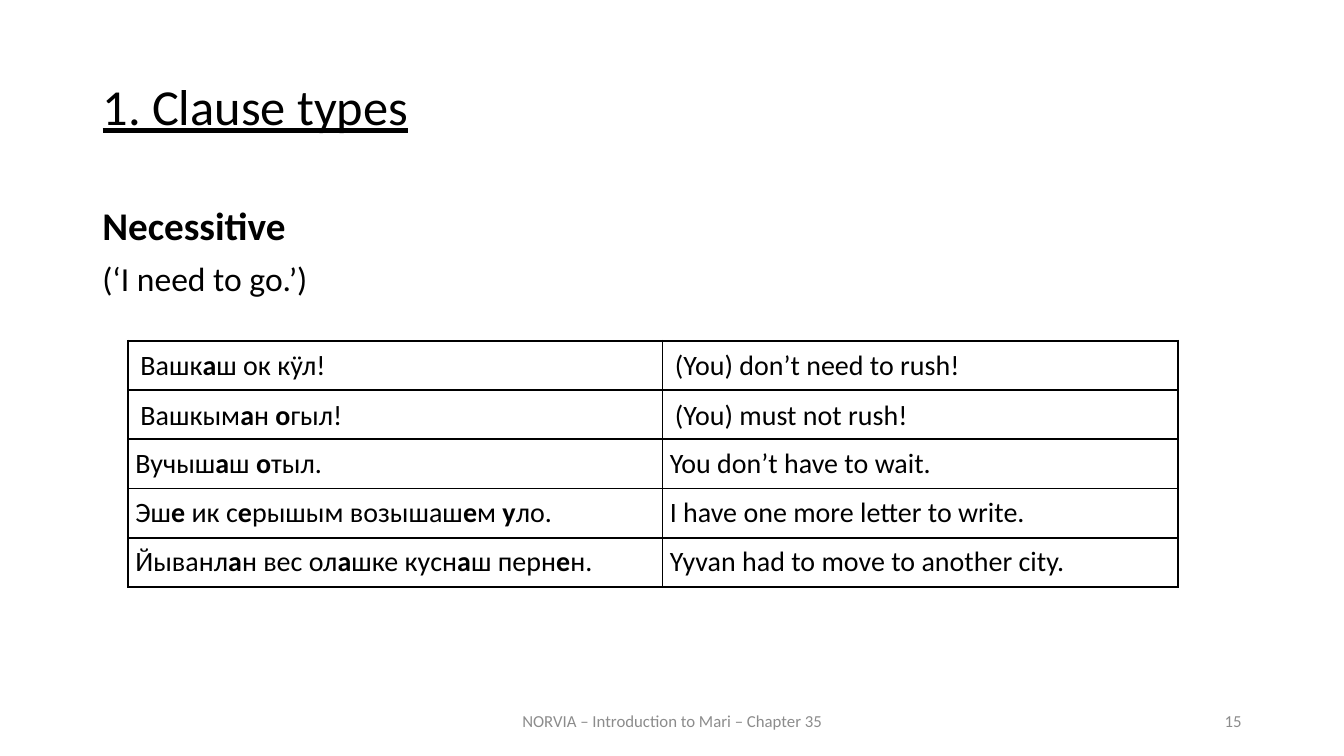
from lxml import etree
from pptx import Presentation
from pptx import util as u
from pptx.dml.color import RGBColor
from pptx.enum import text
from pptx.oxml import ns

COLORS = {"ink": "000000", "footer": "8C8C8C"}
FONT = "Calibri"
NO_STYLE = "{2D5ABB26-0587-4C30-8999-92F81FD0307C}"

# Cell margins in cm: left and right, top
WIDE, NARROW = (0.31, 0.04), (0.18, 0)

# Asterisks enclose bold letters
EXAMPLES = [
    (WIDE, "Вашк*а*ш ок кӱл!", "(You) don’t need to rush!"),
    (WIDE, "Вашкым*а*н *о*гыл!", "(You) must not rush!"),
    (NARROW, "Вучыш*а*ш *о*тыл.", "You don’t have to wait."),
    (NARROW, "Эш*е *ик с*е*рышым возышаш*е*м *у*ло.", "I have one more letter to write."),
    (NARROW, "Йыванл*а*н вес ол*а*шке кусн*а*ш перн*е*н.", "Yyvan had to move to another city."),
]


def write(p, words, size=20, color="ink", align=None, underline=None, before=None, spacing=None):
    """Write words into a paragraph; parts between asterisks are bold."""
    p.alignment, p.line_spacing = align, spacing
    if before is not None:
        p.space_before = u.Pt(before)
    for i, part in enumerate(words.split("*")):
        if part:
            r = p.add_run()
            r.text = part
            f = r.font
            f.name, f.size, f.bold, f.underline = FONT, u.Pt(size), i % 2 == 1, underline
            f.color.rgb = RGBColor.from_string(COLORS[color])


def add_box(s, box, anchor=text.MSO_ANCHOR.TOP):
    tf = s.shapes.add_textbox(*map(u.Cm, box)).text_frame
    tf.word_wrap = True
    tf.vertical_anchor = anchor
    return tf


def add_title(s, box):
    sp = s.shapes.title
    sp.left, sp.top, sp.width, sp.height = map(u.Cm, box)
    tf = sp.text_frame
    tf.vertical_anchor = text.MSO_ANCHOR.TOP
    tf.auto_size = text.MSO_AUTO_SIZE.NONE
    write(tf.paragraphs[0], "1. Clause types", size=36, align=text.PP_ALIGN.JUSTIFY,
          underline=True, before=12, spacing=0.9)


def add_heading(s, box):
    tf = add_box(s, box)
    write(tf.paragraphs[0], "*Necessitive*", size=28, before=10, spacing=0.9)
    write(tf.add_paragraph(), "(‘I need to go.’)", size=24, before=10, spacing=0.9)


def add_borders(cell, **widths):
    """Draw solid cell borders, given as side=points in L, R, T, B order."""
    tcPr = cell._tc.get_or_add_tcPr()
    for i, (side, width) in enumerate(widths.items()):
        ln = etree.Element(ns.qn("a:ln" + side), w=str(u.Pt(width)))
        fill = etree.SubElement(ln, ns.qn("a:solidFill"))
        etree.SubElement(fill, ns.qn("a:srgbClr"), val=COLORS["ink"])
        tcPr.insert(i, ln)


def add_example(s, box, first_column, margins, sentences):
    """Add a one-row table with a sentence and its translation."""
    width = box[2]
    frame = s.shapes.add_table(1, 2, *map(u.Cm, box))
    table = frame.table
    table.first_row = table.horz_banding = False
    frame._element.find(".//" + ns.qn("a:tableStyleId")).text = NO_STYLE
    table.columns[0].width = u.Cm(first_column)
    table.columns[1].width = u.Cm(width - first_column)
    side, top = map(u.Cm, margins)
    for j, sentence in enumerate(sentences):
        cell = table.cell(0, j)
        cell.fill.background()
        cell.vertical_anchor = text.MSO_ANCHOR.MIDDLE
        cell.margin_left = cell.margin_right = side
        cell.margin_top, cell.margin_bottom = top, 0
        write(cell.text_frame.paragraphs[0], sentence)
        add_borders(cell, L=1 if j else 1.5, R=1.5 if j else 1, T=1.5, B=1)


def add_examples(s, box, first_column):
    """Stack the examples, one table each, evenly down the box."""
    left, top, width, height = box
    step = height / len(EXAMPLES)
    for i, (margins, *sentences) in enumerate(EXAMPLES):
        add_example(s, (left, top + i * step, width, step), first_column, margins, sentences)


def add_footer(s, box, number_left, number_width):
    left, top, width, height = box
    middle = text.MSO_ANCHOR.MIDDLE
    write(add_box(s, box, middle).paragraphs[0], "NORVIA – Introduction to Mari – Chapter 35",
          size=12, color="footer", align=text.PP_ALIGN.CENTER)
    write(add_box(s, (number_left, top, number_width, height), middle).paragraphs[0], "15",
          size=12, color="footer", align=text.PP_ALIGN.RIGHT)


def main():
    prs = Presentation()
    prs.slide_width, prs.slide_height = u.Cm(33.87), u.Cm(19.05)
    s = prs.slides.add_slide(prs.slide_layouts[5])
    add_title(s, (2.33, 1.93, 29.21, 2.11))
    add_heading(s, (2.33, 5.08, 29.21, 2.8))
    add_examples(s, (3.23, 8.59, 26.45, 6.2), first_column=13.47)
    add_footer(s, (11.23, 17.65, 11.43, 1.02), number_left=23.92, number_width=7.62)
    prs.save("out.pptx")


if __name__ == "__main__":
    main()
